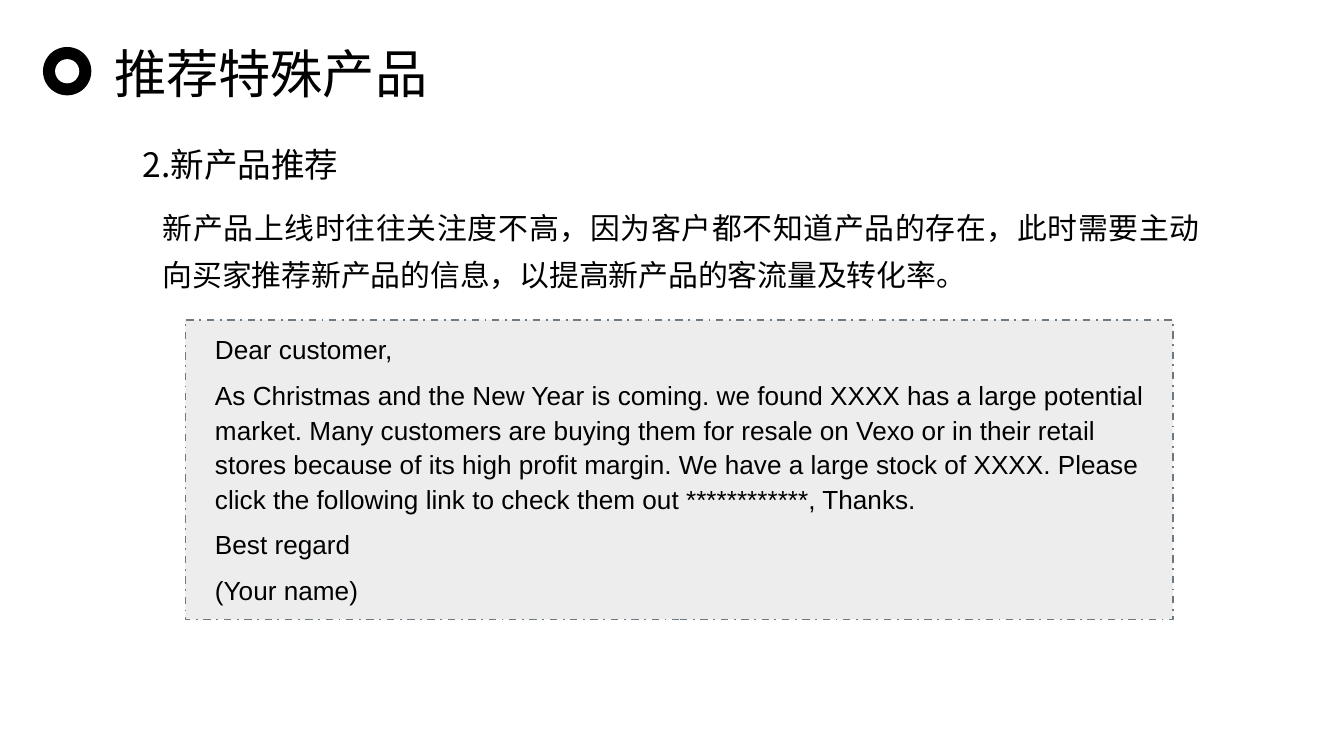
from lxml.etree import SubElement
from pptx import Presentation
from pptx.dml.color import RGBColor
from pptx.enum.dml import MSO_LINE_DASH_STYLE as Dash
from pptx.enum.shapes import MSO_SHAPE as Shape
from pptx.enum.text import MSO_ANCHOR as Anchor, MSO_AUTO_SIZE as AutoSize, PP_ALIGN as Align
from pptx.oxml.ns import qn
from pptx.util import Inches, Pt

COLORS = {"ink": "000000", "paper": "FFFFFF", "panel": "EEEDED", "border": "6D7A84"}
CHINESE, LATIN = "Noto Sans CJK SC", "Arial"

TITLE = "推荐特殊产品"
HEADING = "2.新产品推荐"
INTRO = "新产品上线时往往关注度不高，因为客户都不知道产品的存在，此时需要主动向买家推荐新产品的信息，以提高新产品的客流量及转化率。"
LETTER = [
    "Dear customer,",
    "As Christmas and the New Year is coming. we found XXXX has a large potential market. "
    "Many customers are buying them for resale on Vexo or in their retail stores because of "
    "its high profit margin. We have a large stock of XXXX. Please click the following link "
    "to check them out ************, Thanks.",
    "Best regard",
    "(Your name)",
]
TEXT_BOXES = [
    ((0.97, 0.94, 5.19, 0.48), [HEADING], CHINESE, 18, Align.JUSTIFY, 1.3),
    ((1.12, 1.44, 7.91, 0.79), [INTRO], CHINESE, 16, Align.JUSTIFY, 1.3),
    ((1.51, 2.42, 7.14, 2.15), LETTER, LATIN, 14, Align.LEFT, 1.1),
]
TITLE_PLACE = (0.75, 0.26, 2.6, 0.57)
RING_CENTER = (0.5, 0.53)
RING_DISCS = [(0.36, "ink"), (0.18, "paper")]
PANEL = (1.38, 2.38, 7.35, 2.23)


def color(name):
    return RGBColor.from_string(COLORS[name])


def add_panel(page, kind, place, fill):
    shape = page.shapes.add_shape(kind, *map(Inches, place))
    shape.shadow.inherit = False
    shape.fill.solid()
    shape.fill.fore_color.rgb = color(fill)
    shape.line.fill.background()
    return shape


def write(frame, texts, font, size, align, spacing):
    for index, text in enumerate(texts):
        para = frame.add_paragraph() if index else frame.paragraphs[0]
        para.alignment = align
        para.line_spacing = spacing
        para.space_before = Pt(6 if index else 0)
        span = para.add_run()
        span.text = text
        span.font.size = Pt(size)
        span.font.name = font
        span.font.color.rgb = color("ink")
        SubElement(span.font._element, qn("a:ea"), typeface=font)


deck = Presentation()
deck.slide_width = Inches(10)
deck.slide_height = deck.slide_width * 9 // 16
page = deck.slides.add_slide(deck.slide_layouts[5])

for size, fill in RING_DISCS:
    left, top = (middle - size / 2 for middle in RING_CENTER)
    add_panel(page, Shape.OVAL, (left, top, size, size), fill)

title = page.shapes.title
title.left, title.top, title.width, title.height = map(Inches, TITLE_PLACE)
title.text_frame.word_wrap = True
title.text_frame.auto_size = AutoSize.NONE
title.text_frame.vertical_anchor = Anchor.TOP
title.text_frame.margin_right = 0
write(title.text_frame, [TITLE], CHINESE, 28, Align.LEFT, 1.0)

panel = add_panel(page, Shape.RECTANGLE, PANEL, "panel")
panel.line.color.rgb = color("border")
panel.line.width = Pt(1)
panel.line.dash_style = Dash.DASH_DOT

for place, texts, font, size, align, spacing in TEXT_BOXES:
    box = page.shapes.add_textbox(*map(Inches, place))
    frame = box.text_frame
    frame.word_wrap = True
    frame.margin_left = frame.margin_right = Inches(0.09)
    frame.margin_top = frame.margin_bottom = Inches(0.04)
    write(frame, texts, font, size, align, spacing)

deck.save("out.pptx")
